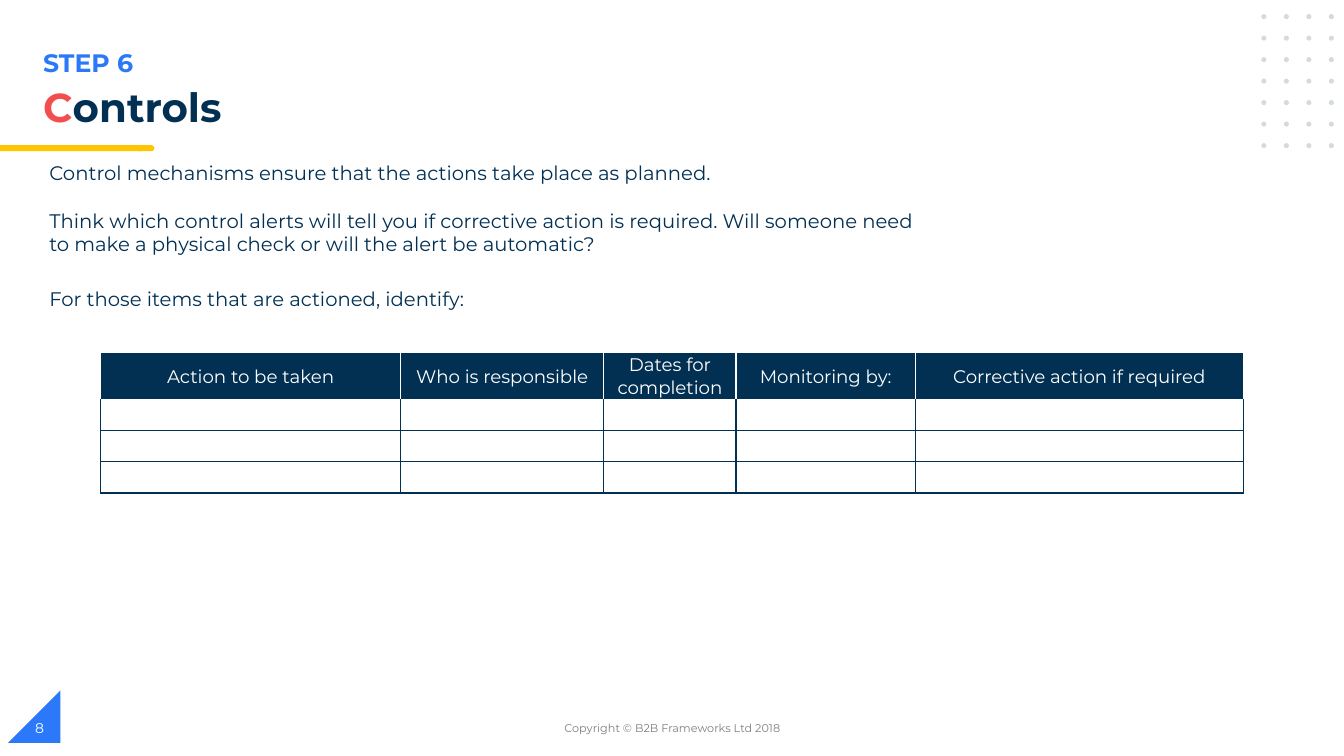
"""Build the Controls step slide with its action table."""
from dataclasses import dataclass
from itertools import product

from lxml import etree
from pptx import Presentation
from pptx import slide as s
from pptx import table as t
from pptx import util as u
from pptx.dml import color
from pptx.enum import shapes, text
from pptx.oxml import ns

FONT = "Montserrat"
NAVY, BLUE, RED, YELLOW = "023053", "2B79F8", "F24E4E", "FFC600"
WHITE, GREY, PALE = "FFFFFF", "7F7F7F", "D1DBE0"
ROW_HEIGHTS = [0.46, 0.31, 0.31, 0.31]


@dataclass
class Area:
    left: float
    top: float
    width: float
    height: float

    def lengths(self) -> list[u.Length]:
        return [u.Inches(v) for v in (self.left, self.top, self.width, self.height)]


@dataclass
class Span:
    words: str
    tint: str = NAVY


@dataclass
class Column:
    heading: str
    width: float


COLUMNS = [
    Column("Action to be taken", 2.97),
    Column("Who is responsible", 2.02),
    Column("Dates for completion", 1.31),
    Column("Monitoring by:", 1.78),
    Column("Corrective action if required", 3.25),
]


def rgb(tint: str) -> color.RGBColor:
    return color.RGBColor.from_string(tint)


def write(frame, paragraphs: list[list[Span]], *, size: float, bold: bool = False,
          align=text.PP_ALIGN.LEFT, spacing: float = 1.0, gap: float = 0) -> None:
    for index, spans in enumerate(paragraphs):
        para = frame.add_paragraph() if index else frame.paragraphs[0]
        para.alignment = align
        para.line_spacing = spacing
        if index:
            para.space_before = u.Pt(gap)
        for span in spans:
            run = para.add_run()
            run.text = span.words
            run.font.name = FONT
            run.font.size = u.Pt(size)
            run.font.bold = bold
            run.font.color.rgb = rgb(span.tint)


def add_text(page: s.Slide, area: Area, paragraphs: list[list[Span]], *,
             anchor=text.MSO_ANCHOR.TOP, **style) -> None:
    frame = page.shapes.add_textbox(*area.lengths()).text_frame
    frame.word_wrap = True
    frame.vertical_anchor = anchor
    write(frame, paragraphs, **style)


def add_filled(page: s.Slide, kind: shapes.MSO_SHAPE, area: Area, tint: str):
    box = page.shapes.add_shape(kind, *area.lengths())
    box.shadow.inherit = False
    box.fill.solid()
    box.fill.fore_color.rgb = rgb(tint)
    box.line.fill.background()
    return box


def set_borders(cell: t._Cell, tint: str, top: str) -> None:
    props = cell._tc.get_or_add_tcPr()
    for side in ("L", "R", "T", "B"):
        line = etree.SubElement(props, ns.qn(f"a:ln{side}"), w=str(u.Pt(1)))
        fill = etree.SubElement(line, ns.qn("a:solidFill"))
        etree.SubElement(fill, ns.qn("a:srgbClr"), val=top if side == "T" else tint)


def add_actions(page: s.Slide) -> None:
    area = Area(1, 3.5, sum(c.width for c in COLUMNS), sum(ROW_HEIGHTS))
    grid = page.shapes.add_table(len(ROW_HEIGHTS), len(COLUMNS), *area.lengths()).table
    grid.first_row = grid.horz_banding = False
    for row, height in zip(grid.rows, ROW_HEIGHTS):
        row.height = u.Inches(height)
    for index, column in enumerate(COLUMNS):
        grid.columns[index].width = u.Inches(column.width)
        for number in range(len(ROW_HEIGHTS)):
            cell = grid.cell(number, index)
            cell.margin_left = cell.margin_right = cell.margin_top = u.Inches(0.01)
            cell.margin_bottom = 0
            cell.vertical_anchor = text.MSO_ANCHOR.MIDDLE
            set_borders(cell, NAVY if number else WHITE, NAVY if number > 1 else WHITE)
            if number:
                cell.fill.background()
            else:
                cell.fill.solid()
                cell.fill.fore_color.rgb = rgb(NAVY)
                write(cell.text_frame, [[Span(column.heading, WHITE)]], size=13,
                      align=text.PP_ALIGN.CENTER)


def add_decoration(page: s.Slide) -> None:
    kinds = shapes.MSO_SHAPE
    corner = add_filled(page, kinds.RIGHT_TRIANGLE, Area(0.08, 6.85, 0.52, 0.52), BLUE)
    corner._element.spPr.xfrm.set("flipH", "1")
    for row, column in product(range(7), range(4)):
        dot = Area(12.51 + 0.67 * column / 3, 0.14 + 1.28 * row / 6, 0.05, 0.05)
        add_filled(page, kinds.OVAL, dot, PALE)
    add_filled(page, kinds.FLOWCHART_TERMINATOR, Area(1.34, 1.44, 0.19, 0.06), YELLOW)
    add_filled(page, kinds.RECTANGLE, Area(0, 1.44, 1.41, 0.06), YELLOW)


def main() -> None:
    deck = Presentation()
    deck.slide_width, deck.slide_height = u.Inches(13.33), u.Inches(7.5)
    page = deck.slides.add_slide(deck.slide_layouts[6])
    add_decoration(page)
    add_text(page, Area(0.33, 0.42, 6.69, 0.4), [[Span("STEP 6", BLUE)]], size=18, bold=True)
    add_text(page, Area(0.33, 0.82, 10.2, 0.56), [[Span("C", RED), Span("ontrols")]],
             size=28.8, bold=True, spacing=0.9)
    add_text(page, Area(0.39, 1.55, 8.82, 1.75), [
        [Span("Control mechanisms ensure that the actions take place as planned.")],
        [Span("Think which control alerts will tell you if corrective action is required. "
              "Will someone need to make a physical check or will the alert be automatic?")],
    ], size=14, gap=17)
    add_text(page, Area(0.39, 2.8, 9.55, 0.34),
             [[Span("For those items that are actioned, identify:")]], size=14)
    add_actions(page)
    add_text(page, Area(4.42, 7.02, 4.5, 0.4),
             [[Span("Copyright © B2B Frameworks Ltd 2018", GREY)]], size=8,
             align=text.PP_ALIGN.CENTER, anchor=text.MSO_ANCHOR.MIDDLE)
    add_text(page, Area(0.25, 7.02, 3, 0.4), [[Span("8", WHITE)]], size=10,
             anchor=text.MSO_ANCHOR.MIDDLE)
    deck.save("out.pptx")


if __name__ == "__main__":
    main()
